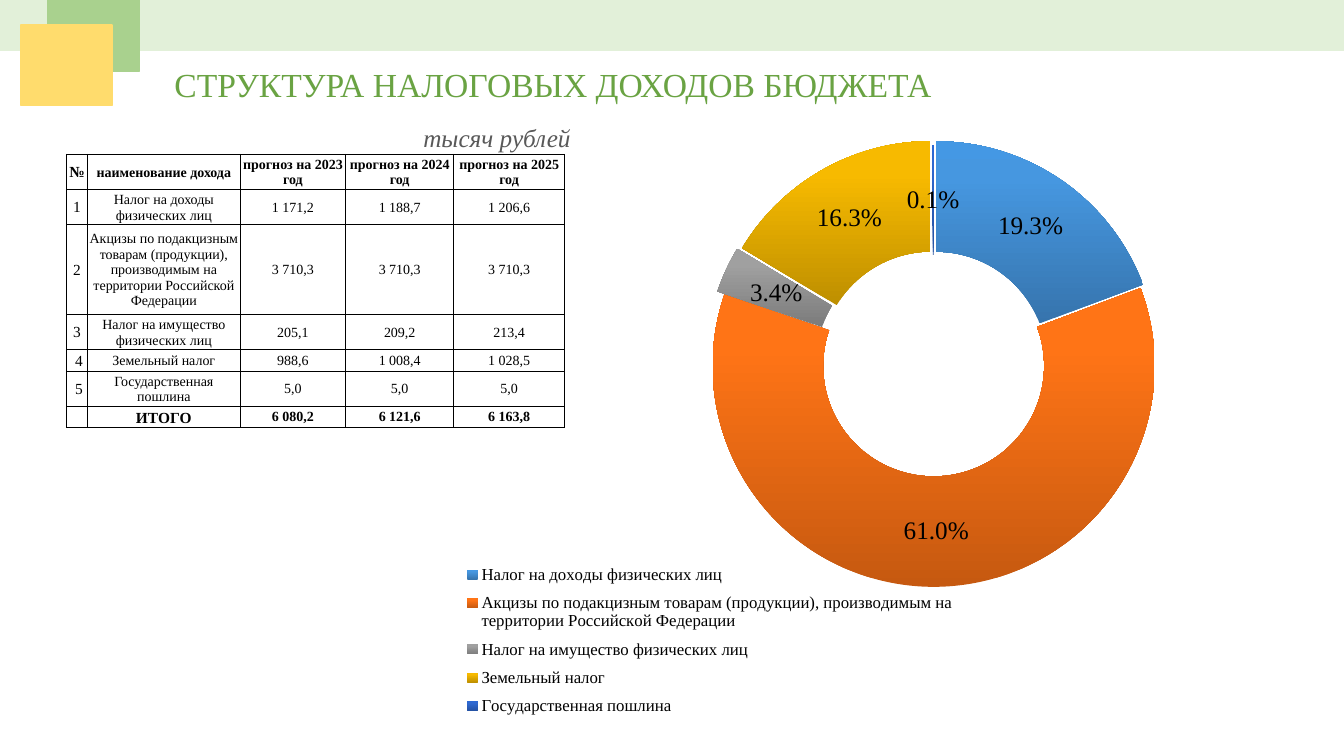
from dataclasses import dataclass

from lxml import etree
from pptx import Presentation
from pptx import util as u
from pptx.chart import data as chart_data
from pptx.dml import color
from pptx.enum import chart as charts, shapes, text
from pptx.oxml import ns, parse_xml


@dataclass(frozen=True)
class Theme:
    serif: str = "Times New Roman"
    chart_font: str = "Calibri"
    ink: str = "000000"
    heading: str = "6AA343"
    muted: str = "595959"
    band: str = "E2F0D9"
    green: str = "A9D18E"
    yellow: str = "FFDC6D"
    title: float = 24
    large: float = 18
    legend: float = 12
    strong: float = 11
    small: float = 10
    # Gradient stops of the ring segments, from bottom to top
    segments: tuple = (
        ("3674AD", "4697E0", "4498E4"),
        ("C65910", "FF7416", "FF7517"),
        ("7B7B7B", "A0A0A0", "A1A1A1"),
        ("BE8F00", "F7BA00", "F8BB00"),
        ("2451A1", "2F69D1", "2C69D5"),
    )


def rgb(value):
    return color.RGBColor.from_string(value)


def inches(*lengths):
    return [u.Inches(length) for length in lengths]


def manual_layout(x, y, w, h, inner=False):
    target = '<c:layoutTarget val="inner"/>' if inner else ""
    return parse_xml(
        f'<c:layout {ns.nsdecls("c")}><c:manualLayout>{target}'
        '<c:xMode val="edge"/><c:yMode val="edge"/>'
        f'<c:x val="{x}"/><c:y val="{y}"/><c:w val="{w}"/><c:h val="{h}"/>'
        "</c:manualLayout></c:layout>")


class SlideBuilder:
    def __init__(self, page, theme):
        self.page = page
        self.theme = theme

    def style(self, font, size, shade=None, name=None, bold=False, italic=False):
        font.name = name or self.theme.serif
        font.size = u.Pt(size)
        font.bold = bold
        font.italic = italic
        font.color.rgb = rgb(shade or self.theme.ink)

    def add_span(self, para, words, size, align, **look):
        para.alignment = align
        span = para.add_run()
        span.text = words
        self.style(span.font, size, **look)

    def line_of_text(self, box, words, size, **look):
        frame = box.text_frame
        frame.word_wrap = False
        frame.auto_size = text.MSO_AUTO_SIZE.SHAPE_TO_FIT_TEXT
        frame.vertical_anchor = text.MSO_ANCHOR.TOP
        self.add_span(frame.paragraphs[0], words, size, text.PP_ALIGN.LEFT, **look)

    def title(self, words, at):
        box = self.page.shapes.title
        box.left, box.top, box.width, box.height = inches(*at)
        self.line_of_text(box, words, self.theme.title, shade=self.theme.heading)

    def label(self, words, at):
        box = self.page.shapes.add_textbox(*inches(*at))
        self.line_of_text(box, words, self.theme.large,
                          shade=self.theme.muted, italic=True)

    def rectangle(self, at, fill):
        box = self.page.shapes.add_shape(
            shapes.MSO_SHAPE.RECTANGLE, *inches(*at))
        box.shadow.inherit = False
        box.fill.solid()
        box.fill.fore_color.rgb = rgb(fill)
        box.line.color.rgb = rgb(fill)
        box.line.width = u.Pt(1)

    def cell(self, cell, words, size, bold, anchor):
        cell.margin_left = cell.margin_right = cell.margin_top = u.Inches(0.01)
        cell.margin_bottom = 0
        cell.vertical_anchor = anchor
        para = cell.text_frame.paragraphs[0]
        if words:
            self.add_span(para, words, size, text.PP_ALIGN.CENTER, bold=bold)
        else:
            etree.SubElement(para._p, ns.qn("a:endParaRPr"), sz=str(size * 100))
        properties = cell._tc.get_or_add_tcPr()
        for side in ("lnL", "lnR", "lnT", "lnB"):
            properties.append(parse_xml(
                f'<a:{side} {ns.nsdecls("a")} w="{u.Pt(0.5)}"><a:solidFill>'
                f'<a:srgbClr val="{self.theme.ink}"/></a:solidFill></a:{side}>'))
        cell.fill.background()

    def table(self, rows, left, top, widths, heights):
        frame = self.page.shapes.add_table(
            len(rows), len(widths),
            *inches(left, top, sum(widths), sum(heights)))
        table = frame.table
        table.first_row = table.horz_banding = False
        for column, width in zip(table.columns, widths):
            column.width = u.Inches(width)
        for row, height in zip(table.rows, heights):
            row.height = u.Inches(height)
        last = len(rows) - 1
        for r, row in enumerate(rows):
            for c, words in enumerate(row):
                total_name = r == last and c == 1
                size = self.theme.strong if c == 0 or total_name else self.theme.small
                anchor = text.MSO_ANCHOR.BOTTOM if total_name else text.MSO_ANCHOR.MIDDLE
                self.cell(table.cell(r, c), words, size, r in (0, last), anchor)

    def segment(self, point, stops, explosion):
        point.format.line.fill.background()
        shape = point.format.fill._xPr
        marks = "".join(
            f'<a:gs pos="{pos}"><a:srgbClr val="{stop}"/></a:gs>'
            for pos, stop in zip((0, 80000, 100000), stops))
        shape.insert(0, parse_xml(
            f'<a:gradFill {ns.nsdecls("a")} rotWithShape="1"><a:gsLst>{marks}'
            '</a:gsLst><a:lin ang="16200000" scaled="0"/></a:gradFill>'))
        if explosion:
            shape.addprevious(parse_xml(
                f'<c:explosion {ns.nsdecls("c")} val="{explosion}"/>'))

    def doughnut(self, names, shares, explosions, at, plot_at, legend_at):
        data = chart_data.CategoryChartData(number_format="0.0")
        data.categories = names
        data.add_series("Series 1", shares)
        chart = self.page.shapes.add_chart(
            charts.XL_CHART_TYPE.DOUGHNUT, *inches(*at), data).chart
        chart.has_title = False
        self.style(chart.font, self.theme.small, name=self.theme.chart_font)

        # Ring
        plot = chart.plots[0]
        plot.vary_by_categories = True
        area = plot._element.getparent()
        for layout in area.findall(ns.qn("c:layout")):
            area.remove(layout)
        area.insert(0, manual_layout(*plot_at, inner=True))
        points = plot.series[0].points
        for i, (stops, explosion) in enumerate(
                zip(self.theme.segments, explosions)):
            self.segment(points[i], stops, explosion)

        # Labels
        plot.has_data_labels = True
        labels = plot.data_labels
        labels.show_value = True
        labels.show_percentage = False
        labels.number_format = '0.0"%"'
        labels.number_format_is_linked = False
        self.style(labels.font, self.theme.large)

        # Legend
        chart.has_legend = True
        legend = chart.legend
        legend.position = charts.XL_LEGEND_POSITION.BOTTOM
        legend.include_in_layout = False
        self.style(legend.font, self.theme.legend)
        for layout in legend._element.findall(ns.qn("c:layout")):
            legend._element.remove(layout)
        legend._element.find(ns.qn("c:legendPos")).addnext(
            manual_layout(*legend_at))


TAXES = ["Налог на доходы физических лиц",
         "Акцизы по подакцизным товарам (продукции), производимым на "
         "территории Российской Федерации",
         "Налог на имущество физических лиц",
         "Земельный налог",
         "Государственная пошлина"]
NUMBERS = ["1", "2", "3", " 4", " 5"]
FORECASTS = [("1 171,2", "1 188,7", "1 206,6"),
             ("3 710,3", "3 710,3", "3 710,3"),
             ("205,1", "209,2", "213,4"),
             ("988,6", "1 008,4", "1 028,5"),
             ("5,0", "5,0", "5,0")]


def main():
    deck = Presentation()
    deck.slide_width, deck.slide_height = inches(13.33, 7.5)
    theme = Theme()
    slide = SlideBuilder(deck.slides.add_slide(deck.slide_layouts[5]), theme)

    # Heading and corner decoration
    slide.title("СТРУКТУРА НАЛОГОВЫХ ДОХОДОВ БЮДЖЕТА", (1.63, 0.58, 7.79, 0.5))
    slide.rectangle((0, 0, 13.33, 0.5), theme.band)
    slide.rectangle((0.47, 0, 0.91, 0.71), theme.green)
    slide.rectangle((0.21, 0.25, 0.9, 0.8), theme.yellow)

    # Forecast table
    header = ["№", "наименование дохода"]
    header += [f"прогноз на {year} год" for year in (2023, 2024, 2025)]
    body = [(number, tax, *sums)
            for number, tax, sums in zip(NUMBERS, TAXES, FORECASTS)]
    total = ["", "ИТОГО", "6 080,2", "6 121,6", "6 163,8"]
    slide.table([header, *body, total], 0.66, 1.53,
                widths=(0.21, 1.51, 1.05, 1.07, 1.1),
                heights=(0.35, 0.35, 0.89, 0.35, 0.21, 0.35, 0.21))

    # Shares of income
    slide.doughnut(TAXES, (19.3, 61, 3.4, 16.3, 0.1), (4, 0, 7, 4, 0),
                   at=(4.1, 1.16, 8.53, 6.04),
                   plot_at=(0.348, 0.046, 0.514, 0.726),
                   legend_at=(0.05, 0.72, 0.59, 0.28))
    slide.label("тысяч рублей", (4.1, 1.16, 1.68, 0.4))

    deck.save("out.pptx")


if __name__ == "__main__":
    main()
